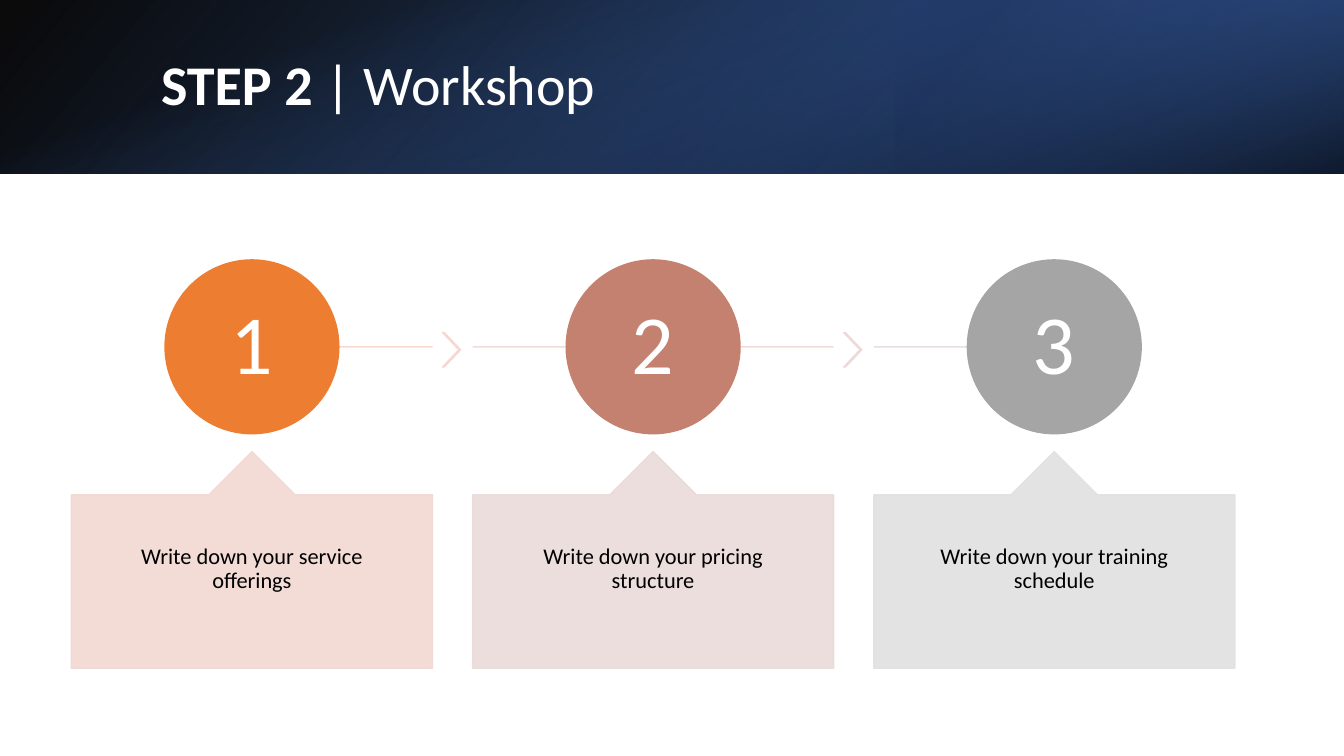
from dataclasses import dataclass
from lxml.etree import SubElement
from pptx import Presentation
from pptx.dml.color import RGBColor
from pptx.enum.shapes import MSO_CONNECTOR, MSO_SHAPE
from pptx.enum.text import MSO_ANCHOR, PP_ALIGN
from pptx.oxml.ns import qn
from pptx.slide import Slide
from pptx.util import Cm, Pt


def color(value):
    return RGBColor.from_string(value)


def set_opacity(shape, percents):
    colors = shape._element.spPr.iter(qn("a:srgbClr"))
    for element, percent in zip(list(colors), percents):
        SubElement(element, qn("a:alpha")).set("val", str(percent * 1000))


@dataclass
class WorkshopPage:
    page: Slide
    font: str = "Calibri"
    spacing: float = 0.9
    opacity: int = 90

    def shape(self, kind, left, top, width, height):
        shape = self.page.shapes.add_shape(kind, Cm(left), Cm(top), Cm(width), Cm(height))
        shape.shadow.inherit = False
        return shape

    def gradient(self, left, top, width, height, stops, angle, rotation=0, flipped=False):
        band = self.shape(MSO_SHAPE.RECTANGLE, left, top, width, height)
        band.line.fill.background()
        band.fill.gradient()
        band.fill.gradient_angle = 360 - angle
        for stop, (position, value, _) in zip(band.fill.gradient_stops, stops):
            stop.position = position
            stop.color.rgb = color(value)
        set_opacity(band, [percent for _, _, percent in stops])
        band.rotation = rotation
        if flipped:
            band._element.spPr.xfrm.set("flipH", "1")

    def solid(self, kind, left, top, width, height, value, adjustments=(), opaque=False):
        shape = self.shape(kind, left, top, width, height)
        for index, amount in enumerate(adjustments):
            shape.adjustments[index] = amount
        shape.fill.solid()
        shape.fill.fore_color.rgb = color(value)
        shape.line.color.rgb = color(value)
        shape.line.width = Pt(1)
        if not opaque:
            set_opacity(shape, [self.opacity] * 2)
        return shape

    def line(self, start, end, y, value):
        line = self.page.shapes.add_connector(
            MSO_CONNECTOR.STRAIGHT, Cm(start), Cm(y), Cm(end), Cm(y))
        line.line.color.rgb = color(value)
        line.line.width = Pt(1)
        set_opacity(line, [self.opacity])
        SubElement(line._element.spPr, qn("a:effectLst"))

    def add_text(self, shape, spans, size, value, align, anchor, insets):
        frame = shape.text_frame
        frame.word_wrap = True
        frame.vertical_anchor = anchor
        side, top = insets
        frame.margin_left = frame.margin_right = Cm(side)
        frame.margin_top = frame.margin_bottom = Cm(top)
        para = frame.paragraphs[0]
        para.alignment = align
        para.line_spacing = self.spacing
        para.font.name = self.font
        para.font.size = Pt(size)
        para.font.color.rgb = color(value)
        for text, bold in spans:
            span = para.add_run()
            span.text = text
            if bold:
                span.font.bold = True

    def title(self, left, top, width, height, spans):
        box = self.page.shapes.add_textbox(Cm(left), Cm(top), Cm(width), Cm(height))
        self.add_text(box, spans, 40, "FFFFFF", PP_ALIGN.LEFT, MSO_ANCHOR.MIDDLE, (0.25, 0.13))

    def circle(self, center, top, size, number, value):
        circle = self.solid(MSO_SHAPE.OVAL, center - size / 2, top, size, size, value, opaque=True)
        self.add_text(circle, [(str(number), False)], 60, "FFFFFF",
                      PP_ALIGN.CENTER, MSO_ANCHOR.MIDDLE, (0.18, 0.18))

    def callout(self, left, top, width, height, text, value):
        callout = self.solid(MSO_SHAPE.UP_ARROW_CALLOUT, left, top, width, height, value,
                             (0.5, 0.2, 0.2, 0.8))
        self.add_text(callout, [(text, False)], 16, "000000",
                      PP_ALIGN.CENTER, MSO_ANCHOR.TOP, (0.71, 1.27))


STEPS = [
    ("Write down your service offerings", "ED7D31", "F2D8D2", "F8D7CE", "F5D7D0"),
    ("Write down your pricing structure", "C48170", "EADBD9", "F0D8D4", "EDD9D7"),
    ("Write down your training schedule", "A5A5A5", "E1E1E1", "E7DCDC", None),
]
FIRST_LEFT, PITCH, CARD_WIDTH = 1.8, 10.11, 9.1
WIDTH, HEIGHT, BAND_HEIGHT = 33.87, 19.05, 4.38


def main():
    deck = Presentation()
    deck.slide_width, deck.slide_height = Cm(WIDTH), Cm(HEIGHT)
    slide = WorkshopPage(deck.slides.add_slide(deck.slide_layouts[6]))

    slide.gradient(0, 0, WIDTH, BAND_HEIGHT,
                   [(0, "000000", 96), (1, "2F5597", 100)], 140, flipped=True)
    slide.gradient(WIDTH * 2 / 3, 0, WIDTH / 3, BAND_HEIGHT,
                   [(0.19, "203864", 68), (1, "4472C4", 79)], 320, rotation=180, flipped=True)
    offset = (WIDTH - BAND_HEIGHT) / 2
    slide.gradient(offset, -offset, BAND_HEIGHT, WIDTH,
                   [(0.23, "4472C4", 0), (0.99, "000000", 74)], 340, rotation=90)
    slide.title(3.81, 0.97, 27.89, 2.44, [("STEP 2 ", True), ("| Workshop", False)])

    last = len(STEPS) - 1
    for index, (text, circle, card, line, chevron) in enumerate(STEPS):
        left = FIRST_LEFT + index * PITCH
        center = left + CARD_WIDTH / 2
        start = left if index else center
        end = left + CARD_WIDTH if index < last else center
        slide.line(start, end, 8.74, line)
        if chevron:
            slide.solid(MSO_SHAPE.CHEVRON, left + 9.35, 8.38, 0.46, 0.87, chevron, [0.9])
        slide.circle(center, 6.55, 4.38, index + 1, circle)
        slide.callout(left, 11.38, CARD_WIDTH, 5.46, text, card)

    deck.save("out.pptx")


if __name__ == "__main__":
    main()
